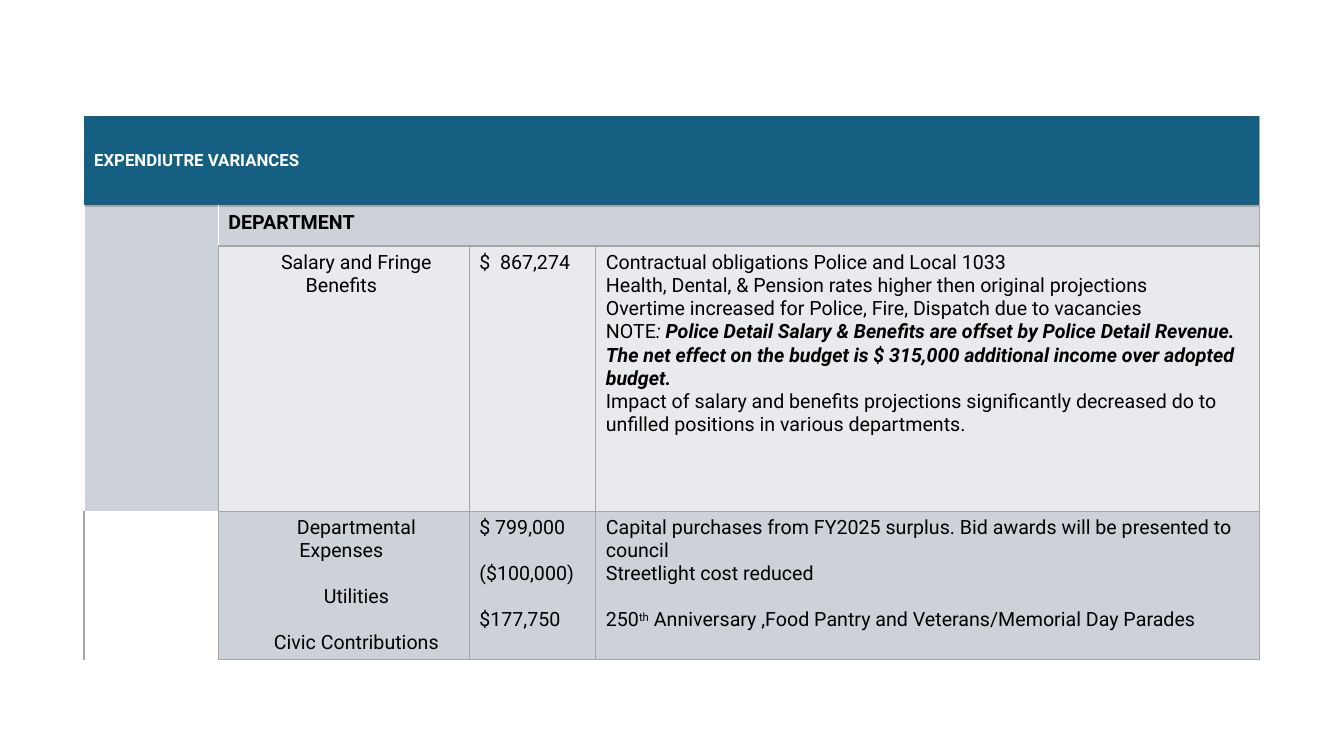
from lxml.etree import SubElement
from pptx import Presentation
from pptx.dml.color import RGBColor
from pptx.enum.text import MSO_ANCHOR, PP_ALIGN
from pptx.oxml import parse_xml
from pptx.oxml.ns import nsdecls, qn
from pptx.util import Pt

COLORS = {
    "header": "156082",
    "band": "CCD2D8",
    "light": "E8EAED",
    "grid": "A6A6A6",
    "white": "FFFFFF",
    "text": "000000",
}
LINE = 16.4  # height of one 14-point text line
COLUMN_WIDTHS = [96, 179.2, 90.4, 474.2]
ROW_HEIGHTS = [64.4, 28.6, 189.4, 102.2]


def set_borders(cell, edges):
    """Draw edges given as left, right, top, bottom colour names; None hides one."""
    properties = cell._tc.get_or_add_tcPr()
    for index, (side, color) in enumerate(zip("LRTB", edges)):
        line = parse_xml(f'<a:ln{side} {nsdecls("a")} w="12700"/>')
        if color:
            fill = SubElement(line, qn("a:solidFill"))
            SubElement(fill, qn("a:srgbClr"), val=COLORS[color])
        else:
            SubElement(line, qn("a:noFill"))
        properties.insert(index, line)


def write_cell(cell, paragraphs, size=14, color="text", bold=False, centered=False):
    """Write (space before, runs) pairs; each run is (text, font settings)."""
    frame = cell.text_frame
    for index, (space, runs) in enumerate(paragraphs):
        para = frame.add_paragraph() if index else frame.paragraphs[0]
        if space:
            para.space_before = Pt(space)
        if centered:
            para.alignment = PP_ALIGN.CENTER
            para._p.get_or_add_pPr().set("indent", str(Pt(18)))
        para.font.name = "Roboto"
        para.font.size = Pt(size)
        para.font.bold = bold
        para.font.color.rgb = RGBColor.from_string(COLORS[color])
        for text, settings in runs:
            span = para.add_run()
            span.text = text
            # Runs state the shared look too, since table cells ignore paragraph defaults
            span.font.name = "Roboto"
            span.font.size = Pt(size)
            span.font.bold = settings.get("bold", bold)
            span.font.italic = settings.get("italic", False)
            span.font.color.rgb = RGBColor.from_string(COLORS[color])
            if "baseline" in settings:
                span._r.get_or_add_rPr().set("baseline", settings["baseline"])


deck = Presentation()
deck.slide_width, deck.slide_height = Pt(960), Pt(540)
page = deck.slides.add_slide(deck.slide_layouts[6])

table = page.shapes.add_table(
    4, 4, Pt(60), Pt(82.8), Pt(sum(COLUMN_WIDTHS)), Pt(sum(ROW_HEIGHTS))
).table
table.first_row = table.horz_banding = False
for column, width in zip(table.columns, COLUMN_WIDTHS):
    column.width = Pt(width)
for row, height in zip(table.rows, ROW_HEIGHTS):
    row.height = Pt(height)

# Fills and borders; special cells override the plain grid
row_fills = ["header", "band", "light", "band"]
special_edges = {
    (1, 0): ["white", "white", "grid", "white"],
    (2, 0): ["white", "white", "white", "white"],
    (1, 1): ["white", "grid", "grid", "grid"],
    (3, 0): ["grid", "grid", "white", "white"],
}
for row_index, row in enumerate(table.rows):
    for column_index, cell in enumerate(row.cells):
        plain = [None, "grid", None, "grid"] if row_index == 0 else ["grid"] * 4
        set_borders(cell, special_edges.get((row_index, column_index), plain))
        if (row_index, column_index) == (3, 0):
            cell.fill.background()
        else:
            name = "band" if (row_index, column_index) == (2, 0) else row_fills[row_index]
            cell.fill.solid()
            cell.fill.fore_color.rgb = RGBColor.from_string(COLORS[name])

table.cell(0, 0).merge(table.cell(0, 3))
table.cell(1, 0).merge(table.cell(2, 0))
table.cell(1, 1).merge(table.cell(1, 3))

header = table.cell(0, 0)
header.vertical_anchor = MSO_ANCHOR.MIDDLE
write_cell(header, [(0, [("EXPENDIUTRE VARIANCES", {})])], 12, "white", True)
write_cell(table.cell(1, 1), [(0, [("DEPARTMENT", {})])], bold=True)

departments = {
    2: [(0, [("Salary and Fringe Benefits ", {})])],
    3: [
        (0, [("Departmental Expenses ", {})]),
        (LINE, [("Utilities", {})]),
        (LINE, [("Civic Contributions", {})]),
    ],
}
amounts = {
    2: [(0, [("$  867,274", {})])],
    3: [
        (0, [("$ 799,000", {})]),
        (LINE, [("($100,000)", {})]),
        (LINE, [("$177,750", {})]),
    ],
}
explanations = {
    2: [
        (0, [("Contractual obligations Police and Local 1033", {})]),
        (0, [("Health, Dental, & Pension rates higher then original projections", {})]),
        (0, [("Overtime increased for Police, Fire, Dispatch due to vacancies", {})]),
        (0, [
            ("NOTE", {}),
            (": ", {"italic": True}),
            ("Police Detail Salary & Benefits are offset by Police Detail Revenue. "
             "The net effect on the budget is $ 315,000 additional income over "
             "adopted budget.", {"bold": True, "italic": True}),
        ]),
        (0, [("Impact of salary and benefits projections significantly decreased "
              "do to unfilled positions in various departments.", {})]),
    ],
    3: [
        (0, [("Capital purchases from FY2025 surplus. Bid awards will be presented "
              "to council", {})]),
        (0, [("Streetlight cost reduced", {})]),
        (LINE, [
            ("250", {}),
            ("th", {"baseline": "30000"}),
            (" Anniversary ,Food Pantry and Veterans/Memorial Day Parades", {}),
        ]),
    ],
}
for row_index in (2, 3):
    write_cell(table.cell(row_index, 1), departments[row_index], centered=True)
    write_cell(table.cell(row_index, 2), amounts[row_index])
    write_cell(table.cell(row_index, 3), explanations[row_index])

deck.save("out.pptx")
